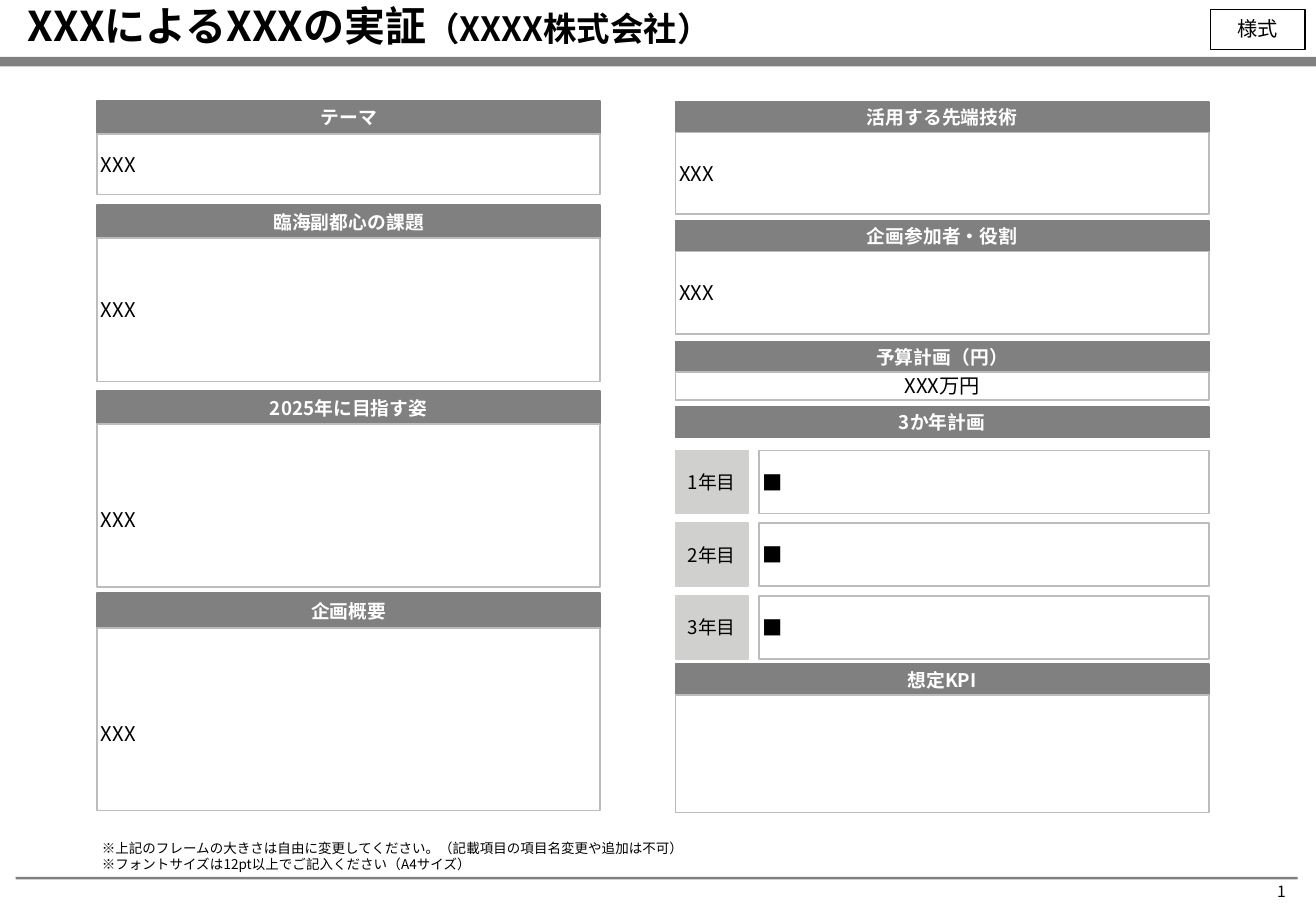
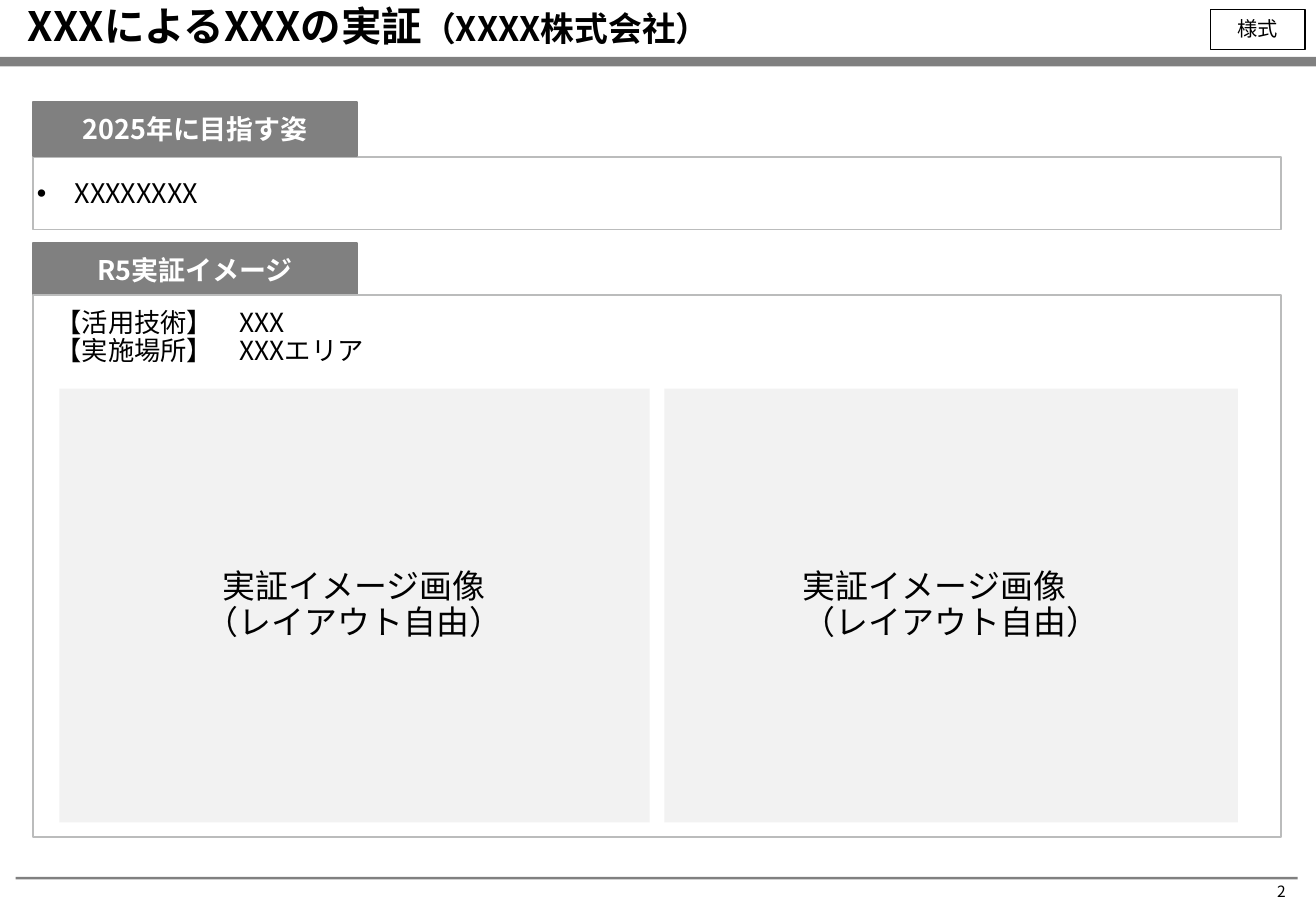
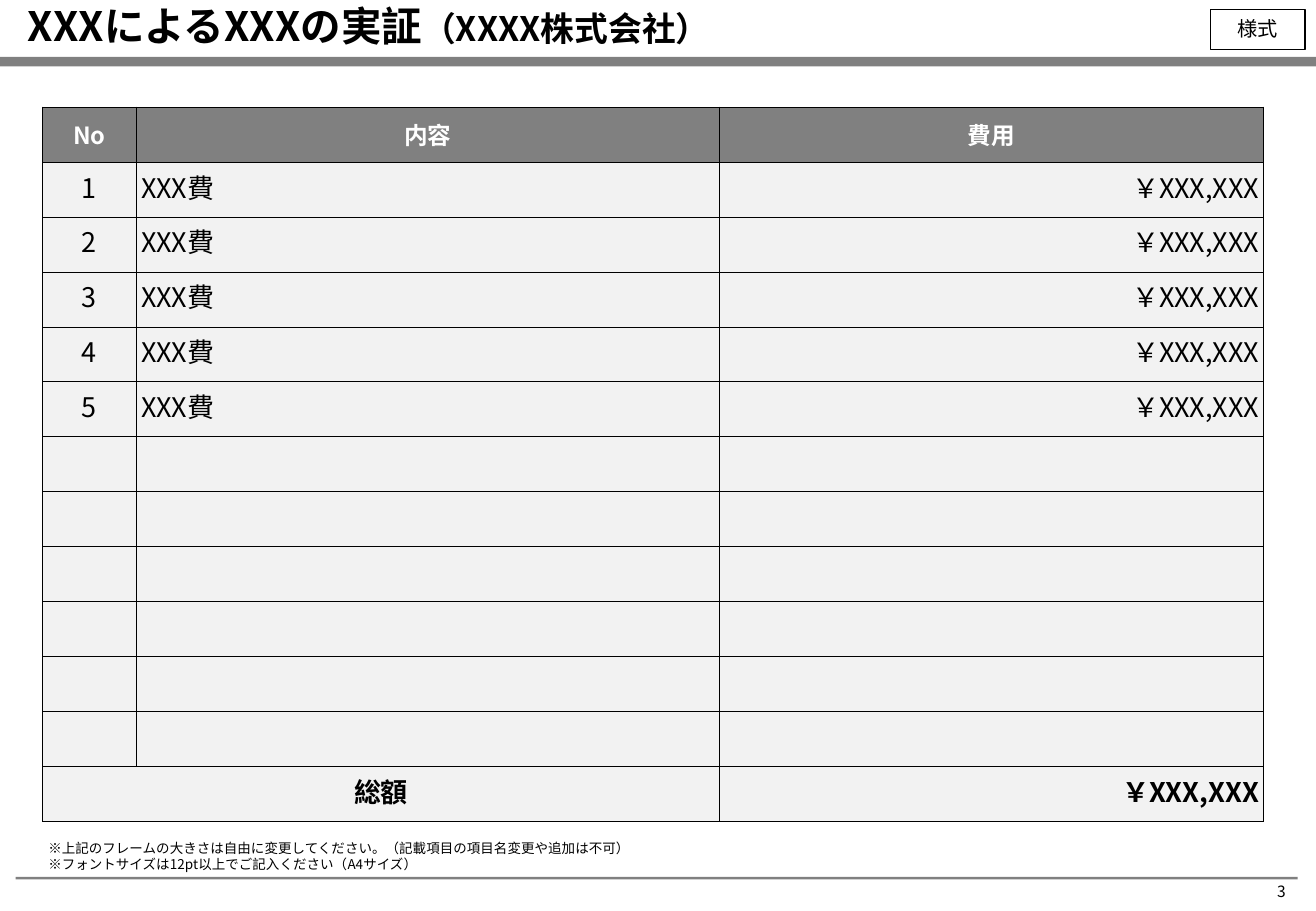
import dataclasses
import typing

import lxml.etree
import pptx
import pptx.dml.color
import pptx.enum.shapes
import pptx.enum.text
import pptx.oxml.ns
import pptx.util

RGB = pptx.dml.color.RGBColor
GRAY = RGB(0x80, 0x80, 0x80)
EDGE = RGB(0xBB, 0xBC, 0xBC)
TAG = RGB(0xD0, 0xD0, 0xCE)
PALE = RGB(0xF2, 0xF2, 0xF2)
WHITE = RGB(0xFF, 0xFF, 0xFF)
BLACK = RGB(0, 0, 0)

FACE = "Noto Sans CJK JP"
ALIGN = pptx.enum.text.PP_ALIGN
MID = pptx.enum.text.MSO_ANCHOR.MIDDLE
FIXED = pptx.enum.text.MSO_AUTO_SIZE.NONE
NOTE = (
    "※上記のフレームの大きさは自由に変更してください。（記載項目の項目名変更や追加は不可）\n"
    "※フォントサイズは12pt以上でご記入ください（A4サイズ）"
)


@dataclasses.dataclass(frozen=True)
class Look:
    fill: typing.Optional[RGB] = None
    line: typing.Optional[RGB] = None
    size: float = 12
    color: RGB = BLACK
    bold: bool = False
    align: ALIGN = ALIGN.LEFT
    pad: float = 0.08
    lead: float = 1.0
    width: float = 1


@dataclasses.dataclass(frozen=True)
class Box:
    x: float
    y: float
    w: float
    h: float
    text: str = ""
    drop: float = 0


@dataclasses.dataclass(frozen=True)
class Panel:
    head: str
    y: float
    bar: float
    body: float
    text: str = ""
    drop: float = 0
    look: typing.Optional[Look] = None


BAND = Look(fill=GRAY)
HEAD = Look(GRAY, GRAY, 11.1, WHITE, True, ALIGN.CENTER)
LEAD = dataclasses.replace(HEAD, size=16)
BODY = Look(WHITE, EDGE)
SUM = dataclasses.replace(BODY, align=ALIGN.CENTER)
YEAR = Look(TAG, TAG, 11.1, align=ALIGN.CENTER)
STAMP = Look(line=BLACK, align=ALIGN.CENTER, pad=0.25, lead=0.9, width=0.75)
IMAGE = Look(fill=PALE, size=19.5, align=ALIGN.CENTER, pad=0.25, lead=0.9)
FACTS = Look(size=15.6, pad=0.25, lead=0.9)
SMALL = Look(size=8, pad=0.1)
PAGE = Look(size=9.2, align=ALIGN.RIGHT, pad=0.25)
TOP = Look(bold=True, lead=0.9)
LIST = Look(WHITE, EDGE, 16)
COLS = Look(GRAY, BLACK, 14, WHITE, True, ALIGN.CENTER, 0.1)
CELL = Look(PALE, BLACK, 16, pad=0.1, width=0.5)

LEFT = [
    Panel("テーマ", 2.11, 0.69, 1.27, "XXX"),
    Panel("臨海副都心の課題", 4.29, 0.69, 3.0, "XXX"),
    Panel("2025年に目指す姿", 8.18, 0.69, 3.4, "XXX", 0.6),
    Panel("企画概要", 12.4, 0.74, 3.81, "XXX", 0.6),
]
RIGHT = [
    Panel("活用する先端技術", 2.13, 0.64, 1.7, "XXX"),
    Panel("企画参加者・役割", 4.62, 0.64, 1.73, "XXX"),
    Panel("予算計画（円）", 7.14, 0.64, 0.58, "XXX万円", look=SUM),
    Panel("3か年計画", 8.51, 0.64, 0),
    Panel("想定KPI", 13.89, 0.64, 2.46),
]


def tag(name: str) -> str:
    return pptx.oxml.ns.qn(name)


def style(para: typing.Any, look: Look, size: bool = True) -> None:
    para.alignment = look.align
    para.line_spacing = look.lead
    para.space_before = pptx.util.Pt(0)
    font = para.font
    font.name = FACE
    font.bold = look.bold
    font.color.rgb = look.color
    if size:
        font.size = pptx.util.Pt(look.size)
    base = para._p.get_or_add_pPr().find(tag("a:defRPr"))
    lxml.etree.SubElement(base, tag("a:ea")).set("typeface", FACE)


def write(frame: typing.Any, text: str, look: Look) -> None:
    frame.text = text
    for para in frame.paragraphs:
        style(para, look)


def place(shape: typing.Any, box: Box) -> None:
    shape.left, shape.top, shape.width, shape.height = (
        pptx.util.Cm(v) for v in (box.x, box.y, box.w, box.h)
    )


def paint(shape: typing.Any, look: Look) -> None:
    if look.fill is None:
        shape.fill.background()
    else:
        shape.fill.solid()
        shape.fill.fore_color.rgb = look.fill
    if look.line is None:
        shape.line.fill.background()
    else:
        shape.line.color.rgb = look.line
        shape.line.width = pptx.util.Pt(look.width)


def inset(frame: typing.Any, look: Look, drop: float = 0) -> None:
    frame.word_wrap = True
    frame.auto_size = FIXED
    frame.vertical_anchor = MID
    frame.margin_left = frame.margin_right = pptx.util.Cm(look.pad)
    frame.margin_top = pptx.util.Cm(0.08 + drop)
    frame.margin_bottom = pptx.util.Cm(0.08)


def draw(slide: typing.Any, box: Box, look: Look) -> typing.Any:
    area = [pptx.util.Cm(v) for v in (box.x, box.y, box.w, box.h)]
    if look.fill is None and look.line is None:
        shape = slide.shapes.add_textbox(*area)
    else:
        kind = pptx.enum.shapes.MSO_SHAPE.RECTANGLE
        shape = slide.shapes.add_shape(kind, *area)
        shape.shadow.inherit = False
        paint(shape, look)
    inset(shape.text_frame, look, box.drop)
    if box.text:
        write(shape.text_frame, box.text, look)
    return shape


def setup(deck: typing.Any, slide: typing.Any) -> None:
    master = deck.slide_master
    bands = [Box(0, 1.19, 27.51, 0.2), Box(0.33, 18.34, 26.8, 0.05)]
    for i, box in enumerate(bands):
        item = draw(slide, box, BAND).element
        item.nvSpPr.cNvPr.set("id", str(50 + i))
        master.shapes.element.insert(2 + i, item)
    title = master.placeholders[0]
    place(title, Box(0.33, 0, 26.8, 1.19))
    title.text_frame.vertical_anchor = MID
    title.text_frame.auto_size = FIXED


def number(slide: typing.Any, page: int) -> None:
    shape = draw(slide, Box(20.93, 18.36, 6.2, 0.56), PAGE)
    para = shape.text_frame.paragraphs[0]
    style(para, PAGE)
    field = lxml.etree.SubElement(para._p, tag("a:fld"))
    field.set("id", "{B6F15528-21DE-4FAA-801E-634DDDAF4B2B}")
    field.set("type", "slidenum")
    lxml.etree.SubElement(field, tag("a:rPr")).set("lang", "ja-JP")
    lxml.etree.SubElement(field, tag("a:t")).text = str(page)


def shared(slide: typing.Any, page: int, big: float, small: float) -> None:
    para = slide.shapes.title.text_frame.paragraphs[0]
    for text, size in (("XXXによるXXXの実証", big), ("（XXXX株式会社）", small)):
        run = para.add_run()
        run.text = text
        run.font.size = pptx.util.Pt(size)
    style(para, TOP, size=False)
    draw(slide, Box(25.3, 0.2, 1.98, 0.84, "様式"), STAMP)
    number(slide, page)


def stack(slide: typing.Any, x: float, w: float, panels: list[Panel]) -> None:
    for p in panels:
        draw(slide, Box(x, p.y, w, p.bar, p.head), HEAD)
        if p.body:
            box = Box(x, p.y + p.bar, w, p.body, p.text, p.drop)
            draw(slide, box, p.look or BODY)


def plan(slide: typing.Any) -> None:
    stack(slide, 2.03, 10.52, LEFT)
    stack(slide, 14.12, 11.15, RIGHT)
    for i in range(3):
        y = 9.42 + 1.52 * i
        draw(slide, Box(14.12, y, 1.52, 1.32, f"{i + 1}年目"), YEAR)
        draw(slide, Box(15.87, y, 9.4, 1.32, "■"), BODY)
    draw(slide, Box(2.03, 17.5, 13.39, 0.81, NOTE), SMALL)


def vision(slide: typing.Any) -> None:
    for y, text in ((2.13, "2025年に目指す姿"), (5.08, "R5実証イメージ")):
        draw(slide, Box(0.69, y, 6.78, 1.14, text), LEAD)
    goal = slide.placeholders[1]
    place(goal, Box(0.69, 3.28, 26.09, 1.52))
    paint(goal, LIST)
    inset(goal.text_frame, LIST)
    write(goal.text_frame, "XXXXXXXX", LIST)
    props = goal.text_frame.paragraphs[0]._p.get_or_add_pPr()
    dent = pptx.util.Cm(0.79)
    props.set("marL", str(dent))
    props.set("indent", str(-dent))
    draw(slide, Box(0.69, 6.17, 26.09, 11.33), BODY)
    for x, w, end in ((1.24, 12.34, ""), (13.89, 11.99, "　")):
        text = f"実証イメージ画像{end}\n（レイアウト自由）"
        draw(slide, Box(x, 8.13, w, 9.07, text), IMAGE)
    facts = "【活用技術】　XXX\n【実施場所】　XXXエリア"
    draw(slide, Box(0.91, 6.27, 24.94, 1.6, facts), FACTS)


def border(cell: typing.Any) -> None:
    props = cell._tc.get_or_add_tcPr()
    for i, side in enumerate(("a:lnL", "a:lnR", "a:lnT", "a:lnB")):
        line = lxml.etree.Element(tag(side))
        line.set("w", str(pptx.util.Pt(0.5)))
        fill = lxml.etree.SubElement(line, tag("a:solidFill"))
        lxml.etree.SubElement(fill, tag("a:srgbClr")).set("val", str(BLACK))
        props.insert(i, line)


def costs(slide: typing.Any) -> None:
    items = [[str(i), "XXX費", "￥XXX,XXX"] for i in range(1, 6)]
    rows = [["No", "内容", "費用"], *items]
    rows += [["", "", ""] for _ in range(6)]
    rows.append(["総額", "", "￥XXX,XXX"])
    wide = (1.96, 12.19, 11.38)
    high = 1.15
    area = (0.89, 2.24, sum(wide), high * len(rows))
    frame = slide.shapes.add_table(
        len(rows), len(wide), *(pptx.util.Cm(v) for v in area)
    )
    table = frame.table
    table.horz_banding = False
    for col, w in zip(table.columns, wide):
        col.width = pptx.util.Cm(w)
    last = len(rows) - 1
    sides = (ALIGN.CENTER, ALIGN.LEFT, ALIGN.RIGHT)
    for r, row in enumerate(rows):
        table.rows[r].height = pptx.util.Cm(high)
        for c, text in enumerate(row):
            cell = table.cell(r, c)
            look = COLS
            if r:
                look = dataclasses.replace(CELL, align=sides[c], bold=r == last)
            else:
                cell.vertical_anchor = MID
            cell.margin_left = cell.margin_right = pptx.util.Cm(look.pad)
            cell.margin_top = cell.margin_bottom = pptx.util.Cm(look.pad)
            cell.fill.solid()
            cell.fill.fore_color.rgb = look.fill
            write(cell.text_frame, text, look)
            border(cell)
    table.cell(last, 0).merge(table.cell(last, 1))
    draw(slide, Box(0.91, 17.5, 13.39, 0.81, NOTE), SMALL)


def main() -> None:
    deck = pptx.Presentation()
    deck.slide_width = pptx.util.Cm(27.51)
    deck.slide_height = pptx.util.Cm(19.05)
    pages = ((plan, 5, 24.3, 19.8), (vision, 1, 24, 20), (costs, 5, 24, 20))
    for page, (fill, kind, big, small) in enumerate(pages, 1):
        slide = deck.slides.add_slide(deck.slide_layouts[kind])
        if page == 1:
            setup(deck, slide)
        fill(slide)
        shared(slide, page, big, small)
    deck.save("out.pptx")


if __name__ == "__main__":
    main()
